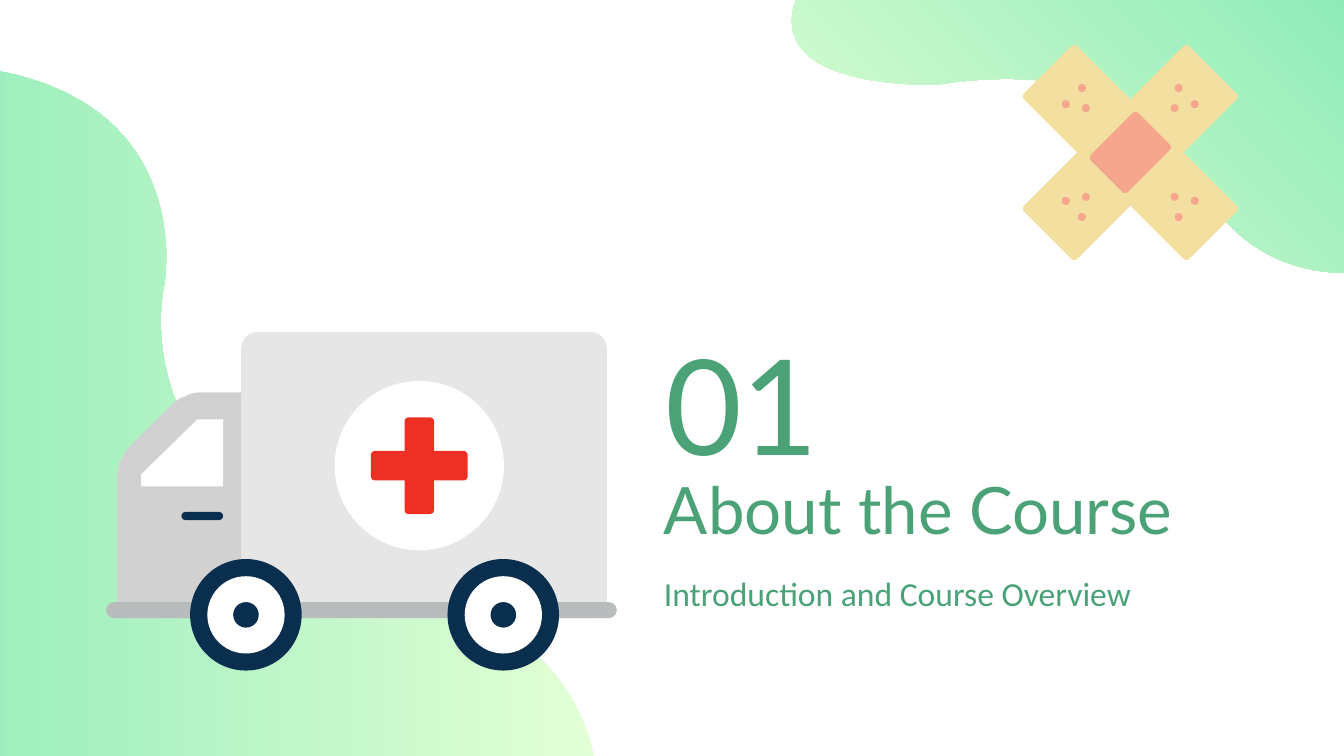
from dataclasses import dataclass
from itertools import product

from pptx import Presentation
from pptx.dml.color import RGBColor
from pptx.enum.shapes import MSO_SHAPE as Preset
from pptx.enum.text import MSO_ANCHOR as Anchor, MSO_AUTO_SIZE as AutoSize, PP_ALIGN as Align
from pptx.shapes.autoshape import Shape
from pptx.shapes.shapetree import SlideShapes
from pptx.util import Emu, Inches, Pt

COLUMNS = 100
SLIDE_WIDTH = Inches(10)
SLIDE_HEIGHT = Inches(5.625)
CELL = SLIDE_WIDTH / COLUMNS
CURVE_STEPS = 24

WHITE = RGBColor(0xFF, 0xFF, 0xFF)
TEXT_GREEN = RGBColor(0x4A, 0xA2, 0x76)
PALE_GREEN = RGBColor(0xE3, 0xFF, 0xD5)
MINT = RGBColor(0x90, 0xEB, 0xBA)
PLASTER = RGBColor(0xF3, 0xE0, 0xA0)
SALMON = RGBColor(0xF7, 0xA6, 0x8E)
CAB_GREY = RGBColor(0xD1, 0xD1, 0xD1)
BODY_GREY = RGBColor(0xE6, 0xE6, 0xE6)
BASE_GREY = RGBColor(0xB9, 0xBC, 0xBD)
NAVY = RGBColor(0x0A, 0x2E, 0x4E)
RED = RGBColor(0xED, 0x30, 0x24)

Point = tuple[float, float]


@dataclass(frozen=True)
class Outline:
    start: Point
    segments: tuple[tuple[Point, ...], ...]


@dataclass(frozen=True)
class Block:
    center: Point
    width: float
    height: float
    radius: float
    color: RGBColor
    rotation: float = 0


@dataclass(frozen=True)
class Caption:
    text: str
    left: float
    top: float
    height: float
    size: float
    font: str
    anchor: Anchor


LEFT_BLOB = Outline((44.2, 56.4), (
    ((43.6, 52.8), (40.8, 46.2), (27.6, 41.8)),
    ((8.8, 35.6), (12.2, 21.3), (12.2, 21.3)),
    ((12.2, 21.3), (15.6, 3.6), (-8.6, 4.8)),
    ((-8.6, 56.4),),
))
RIGHT_BLOB = Outline((100, 20.3), (
    ((96.9, 20.3), (91.7, 19.1), (88.8, 12.8)),
    ((84.6, 3.4), (69.9, 6.3), (69.9, 6.3)),
    ((69.9, 6.3), (56.8, 6.9), (59.2, 0)),
    ((100, 0),),
))
CAB = Outline((14.9, 29.2), (
    ((14.5, 29.2), (14.1, 29.3), (13.8, 29.5)),
    ((13.4, 29.6), (13.1, 29.8), (12.8, 30.1)),
    ((9.5, 33.4),),
    ((9.3, 33.7), (9.1, 34.1), (8.9, 34.4)),
    ((8.8, 34.8), (8.7, 35.1), (8.7, 35.5)),
    ((8.7, 46),), ((18, 46),), ((18, 29.2),),
))
WINDOW = Outline((10.5, 36.2), (((16.6, 36.2),), ((16.6, 31.2),), ((14.7, 31.2),), ((10.5, 35.3),)))

TITLE = Caption("About the Course", 48.4, 33.9, 6.7, 35, "Lato", Anchor.TOP)
NUMBER = Caption("01", 48.5, 23, 10.5, 71, "Lato", Anchor.TOP)
SUBTITLE = Caption("Introduction and Course Overview", 48.4, 42.5, 3.2, 18, "Calibri", Anchor.MIDDLE)
CAPTION_WIDTH = 43.7

BANDAGE_CENTER = (84.1, 11.35)
BANDAGE_DOTS = ((3.6, 4.8), (4.8, 3.6), (3.3, 3.3))
CROSS_CENTER = (31.2, 34.65)
WHEEL_CENTERS = ((18.3, 45.75), (37.45, 45.75))
WHEEL_RINGS = ((8.3, NAVY), (5.75, WHITE), (1.9, NAVY))


def cells(count: float) -> Emu:
    return Emu(round(count * CELL))


def paint(shape: Shape, color: RGBColor) -> None:
    shape.shadow.inherit = False
    shape.line.fill.background()
    shape.fill.solid()
    shape.fill.fore_color.rgb = color


def paint_gradient(shape: Shape, angle: float) -> None:
    paint(shape, MINT)
    shape.fill.gradient()
    shape.fill.gradient_angle = angle
    for stop, color in zip(shape.fill.gradient_stops, (PALE_GREEN, MINT)):
        stop.color.rgb = color


def curve_point(corners: tuple[Point, ...], share: float) -> Point:
    rest = 1 - share
    weights = (rest**3, 3 * rest**2 * share, 3 * rest * share**2, share**3)
    x, y = (sum(w * corner[axis] for w, corner in zip(weights, corners)) for axis in (0, 1))
    return x, y


def draw_outline(shapes: SlideShapes, outline: Outline) -> Shape:
    points = [outline.start]
    for segment in outline.segments:
        if len(segment) == 1:
            points.extend(segment)
        else:
            corners = (points[-1], *segment)
            points.extend(curve_point(corners, step / CURVE_STEPS) for step in range(1, CURVE_STEPS + 1))
    vertices = [(cells(x), cells(y)) for x, y in points]
    builder = shapes.build_freeform(*vertices[0])
    builder.add_line_segments(vertices[1:], close=True)
    return builder.convert_to_shape()


def draw_preset(shapes: SlideShapes, preset: Preset, center: Point,
                width: float, height: float, color: RGBColor) -> Shape:
    left, top = center[0] - width / 2, center[1] - height / 2
    shape = shapes.add_shape(preset, cells(left), cells(top), cells(width), cells(height))
    paint(shape, color)
    return shape


def draw_block(shapes: SlideShapes, block: Block) -> None:
    shape = draw_preset(shapes, Preset.ROUNDED_RECTANGLE, block.center, block.width, block.height, block.color)
    shape.adjustments[0] = block.radius / min(block.width, block.height)
    shape.rotation = block.rotation


def draw_circle(shapes: SlideShapes, center: Point, diameter: float, color: RGBColor) -> None:
    draw_preset(shapes, Preset.OVAL, center, diameter, diameter, color)


def write_caption(shape: Shape, caption: Caption) -> None:
    shape.left, shape.top = cells(caption.left), cells(caption.top)
    shape.width, shape.height = cells(CAPTION_WIDTH), cells(caption.height)
    frame = shape.text_frame
    frame.text = caption.text
    frame.word_wrap = True
    frame.auto_size = AutoSize.NONE
    frame.vertical_anchor = caption.anchor
    frame.margin_left = frame.margin_right = frame.margin_top = frame.margin_bottom = cells(1)
    paragraph = frame.paragraphs[0]
    paragraph.alignment = Align.LEFT
    paragraph.space_before = Pt(0)
    font = paragraph.runs[0].font
    font.name, font.size, font.color.rgb = caption.font, Pt(caption.size), TEXT_GREEN


def draw_bandage(shapes: SlideShapes) -> None:
    for rotation in (-45, 45):
        draw_block(shapes, Block(BANDAGE_CENTER, 17.4, 5.6, 0.3, PLASTER, rotation))
        draw_block(shapes, Block(BANDAGE_CENTER, 3.9, 5, 0.3, SALMON, rotation))
    center_x, center_y = BANDAGE_CENTER
    for side, level, (x, y) in product((-1, 1), (-1, 1), BANDAGE_DOTS):
        draw_circle(shapes, (center_x + side * x, center_y + level * y), 0.6, SALMON)


def draw_ambulance(shapes: SlideShapes) -> None:
    paint(draw_outline(shapes, CAB), CAB_GREY)
    paint(draw_outline(shapes, WINDOW), WHITE)
    draw_block(shapes, Block((15.05, 38.4), 3.1, 0.6, 0.3, NAVY))
    draw_block(shapes, Block((31.55, 35.35), 27.2, 21.3, 1.2, BODY_GREY))
    draw_circle(shapes, CROSS_CENTER, 12.6, WHITE)
    for width, height in ((7.2, 2.2), (2.2, 7.2)):
        draw_block(shapes, Block(CROSS_CENTER, width, height, 0.3, RED))
    draw_block(shapes, Block((26.9, 45.4), 38, 1.2, 0.6, BASE_GREY))
    for center, (diameter, color) in product(WHEEL_CENTERS, WHEEL_RINGS):
        draw_circle(shapes, center, diameter, color)


def main() -> None:
    presentation = Presentation()
    presentation.slide_width, presentation.slide_height = SLIDE_WIDTH, SLIDE_HEIGHT
    slide = presentation.slides.add_slide(presentation.slide_layouts[0])
    shapes = slide.shapes
    paint_gradient(draw_outline(shapes, LEFT_BLOB), 180)
    paint_gradient(draw_outline(shapes, RIGHT_BLOB), 45)
    write_caption(shapes.title, TITLE)
    write_caption(shapes.add_textbox(0, 0, 0, 0), NUMBER)
    write_caption(slide.placeholders[1], SUBTITLE)
    draw_bandage(shapes)
    draw_ambulance(shapes)
    presentation.save("out.pptx")


if __name__ == "__main__":
    main()
